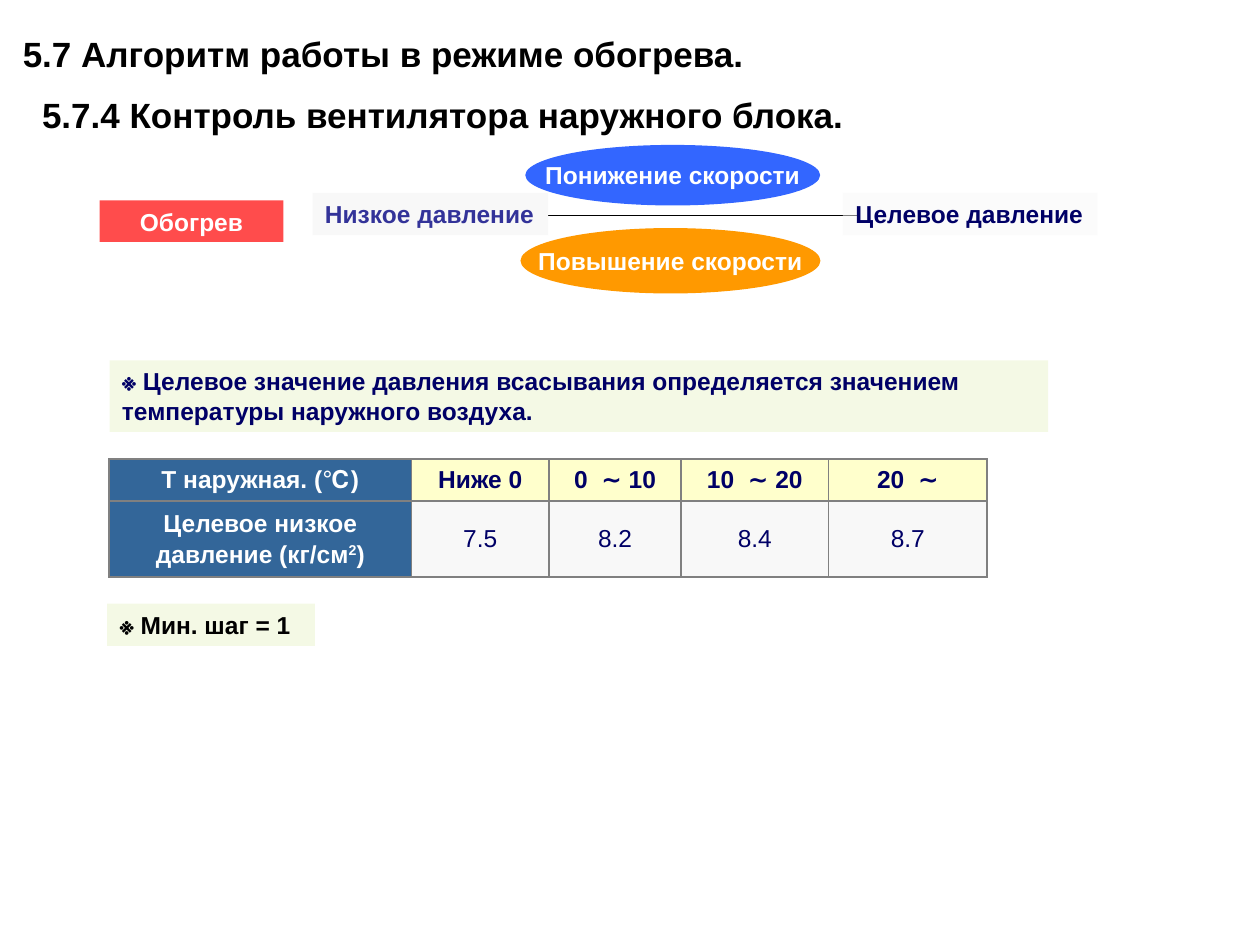
from dataclasses import dataclass

import lxml.etree
import pptx
import pptx.dml.color
import pptx.enum.shapes
import pptx.enum.text
import pptx.oxml.ns
import pptx.shapes.autoshape
import pptx.table
import pptx.text.text
import pptx.util

Pt = pptx.util.Pt
Align = pptx.enum.text.PP_ALIGN
Anchor = pptx.enum.text.MSO_ANCHOR
Fit = pptx.enum.text.MSO_AUTO_SIZE
Preset = pptx.enum.shapes.MSO_SHAPE
qn = pptx.oxml.ns.qn

COLORS = {
    "black": "000000",
    "white": "FFFFFF",
    "navy": "000066",
    "indigo": "333399",
    "pale": "F8F8F8",
    "lime": "99CC00",
    "red": "FF0000",
    "blue": "3366FF",
    "orange": "FF9900",
    "header": "336699",
    "cream": "FFFFCC",
    "border": "808080",
}


@dataclass(frozen=True)
class Label:
    text: str
    left: float
    top: float
    width: float
    height: float
    fill: str
    color: str
    opacity: int = 100
    preset: Preset = Preset.RECTANGLE
    align: Align = Align.LEFT
    wrap: bool = False


LABELS = [
    Label("Целевое давление", 481.7, 110.2, 145.4, 24.2, "pale", "navy", opacity=50),
    Label("Низкое давление", 178.6, 110.2, 134.6, 24.2, "pale", "indigo"),
    Label("※ Целевое значение давления всасывания определяется значением "
          "температуры наружного воздуха.",
          62.6, 205.9, 536.4, 41, "lime", "navy", opacity=10, wrap=True),
    Label("Обогрев", 56.9, 114.5, 105.1, 23.8, "red", "white",
          opacity=70, align=Align.CENTER, wrap=True),
    Label("Понижение скорости", 300.2, 82.8, 168.5, 34.6, "blue", "white",
          preset=Preset.OVAL, align=Align.CENTER),
    Label("Повышение скорости", 297.4, 130.3, 171.4, 37.4, "orange", "white",
          preset=Preset.OVAL, align=Align.CENTER),
    Label("※ Мин. шаг = 1", 61.2, 344.9, 118.8, 24.2, "lime", "black", opacity=10),
]

PRESSURE_ROWS = [
    ["Т наружная. (℃)", "Ниже 0", "0  ∼ 10", "10  ∼ 20", "20  ∼"],
    ["Целевое низкое\nдавление (кг/см^2^)", "7.5", "8.2", "8.4", "8.7"],
]
COLUMN_WIDTHS = [172.8, 78.5, 75.6, 84.2, 90.7]
ROW_HEIGHTS = [24, 43.5]


def rgb(name: str) -> pptx.dml.color.RGBColor:
    return pptx.dml.color.RGBColor.from_string(COLORS[name])


def write_text(frame: pptx.text.text.TextFrame, text: str, *, color: str,
               size: float = 14, bold: bool = True, align: Align = Align.LEFT,
               space_before: float = 0) -> None:
    for index, line in enumerate(text.split("\n")):
        paragraph = frame.paragraphs[0] if index == 0 else frame.add_paragraph()
        paragraph.alignment = align
        paragraph.space_before = Pt(space_before)
        for position, part in enumerate(line.split("^")):
            run = paragraph.add_run()
            run.text = part
            run.font.name = "Arial"
            run.font.size = Pt(size)
            run.font.bold = bold
            run.font.color.rgb = rgb(color)
            if position % 2:
                run.font._element.set("baseline", "30000")


def draw_label(slide: pptx.slide.Slide, label: Label) -> None:
    shape = slide.shapes.add_shape(label.preset, Pt(label.left), Pt(label.top),
                                   Pt(label.width), Pt(label.height))
    shape.shadow.inherit = False
    shape.line.fill.background()
    shape.fill.solid()
    shape.fill.fore_color.rgb = rgb(label.fill)
    if label.opacity < 100:
        color = shape._element.spPr.find(f"{qn('a:solidFill')}/{qn('a:srgbClr')}")
        lxml.etree.SubElement(color, qn("a:alpha"), val=str(label.opacity * 1000))
    frame = shape.text_frame
    frame.word_wrap = label.wrap
    is_oval = label.preset == Preset.OVAL
    frame.vertical_anchor = Anchor.MIDDLE if is_oval else Anchor.TOP
    frame.auto_size = Fit.NONE if is_oval else Fit.SHAPE_TO_FIT_TEXT
    write_text(frame, label.text, color=label.color, align=label.align)


def draw_pressure_line(slide: pptx.slide.Slide) -> None:
    pressure_line = slide.shapes.add_connector(
        pptx.enum.shapes.MSO_CONNECTOR.STRAIGHT,
        Pt(236.2), Pt(123.1), Pt(490.3), Pt(123.1))
    pressure_line.line.color.rgb = rgb("black")
    pressure_line.line.width = Pt(0.75)
    lxml.etree.SubElement(pressure_line._element.spPr, qn("a:effectLst"))


def add_borders(cell: pptx.table._Cell) -> None:
    properties = cell._tc.get_or_add_tcPr()
    for index, side in enumerate(("a:lnL", "a:lnR", "a:lnT", "a:lnB")):
        border = lxml.etree.Element(qn(side), w=str(Pt(1)))
        fill = lxml.etree.SubElement(border, qn("a:solidFill"))
        lxml.etree.SubElement(fill, qn("a:srgbClr"), val=COLORS["border"])
        properties.insert(index, border)


def draw_pressure_table(slide: pptx.slide.Slide) -> None:
    table = slide.shapes.add_table(
        len(ROW_HEIGHTS), len(COLUMN_WIDTHS), Pt(62.4), Pt(262.3),
        Pt(sum(COLUMN_WIDTHS)), Pt(sum(ROW_HEIGHTS))).table
    for column, width in zip(table.columns, COLUMN_WIDTHS):
        column.width = Pt(width)
    for row, height in zip(table.rows, ROW_HEIGHTS):
        row.height = Pt(height)
    for r, texts in enumerate(PRESSURE_ROWS):
        for c, text in enumerate(texts):
            cell = table.cell(r, c)
            is_name, is_range = c == 0, r == 0
            cell.vertical_anchor = Anchor.MIDDLE
            cell.fill.solid()
            cell.fill.fore_color.rgb = rgb(
                "header" if is_name else "cream" if is_range else "pale")
            add_borders(cell)
            write_text(cell.text_frame, text, color="white" if is_name else "navy",
                       bold=is_name or is_range, align=Align.CENTER, space_before=2)


def fill_title(slide: pptx.slide.Slide) -> None:
    title = slide.shapes.title
    title.left, title.top = Pt(5.8), Pt(15.1)
    title.width, title.height = Pt(636.5), Pt(67.7)
    frame = title.text_frame
    frame.word_wrap = True
    frame.auto_size = Fit.NONE
    frame.vertical_anchor = Anchor.TOP
    write_text(frame, "5.7 Алгоритм работы в режиме обогрева.\n"
               "5.7.4 Контроль вентилятора наружного блока.",
               color="black", size=20, space_before=10.7)
    frame.paragraphs[1]._p.get_or_add_pPr().set("marL", str(Pt(11)))


def main() -> None:
    presentation = pptx.Presentation()
    presentation.slide_width, presentation.slide_height = Pt(720), Pt(540)
    slide = presentation.slides.add_slide(presentation.slide_layouts[5])
    fill_title(slide)
    draw_pressure_line(slide)
    for label in LABELS:
        draw_label(slide, label)
    draw_pressure_table(slide)
    presentation.save("out.pptx")


if __name__ == "__main__":
    main()
